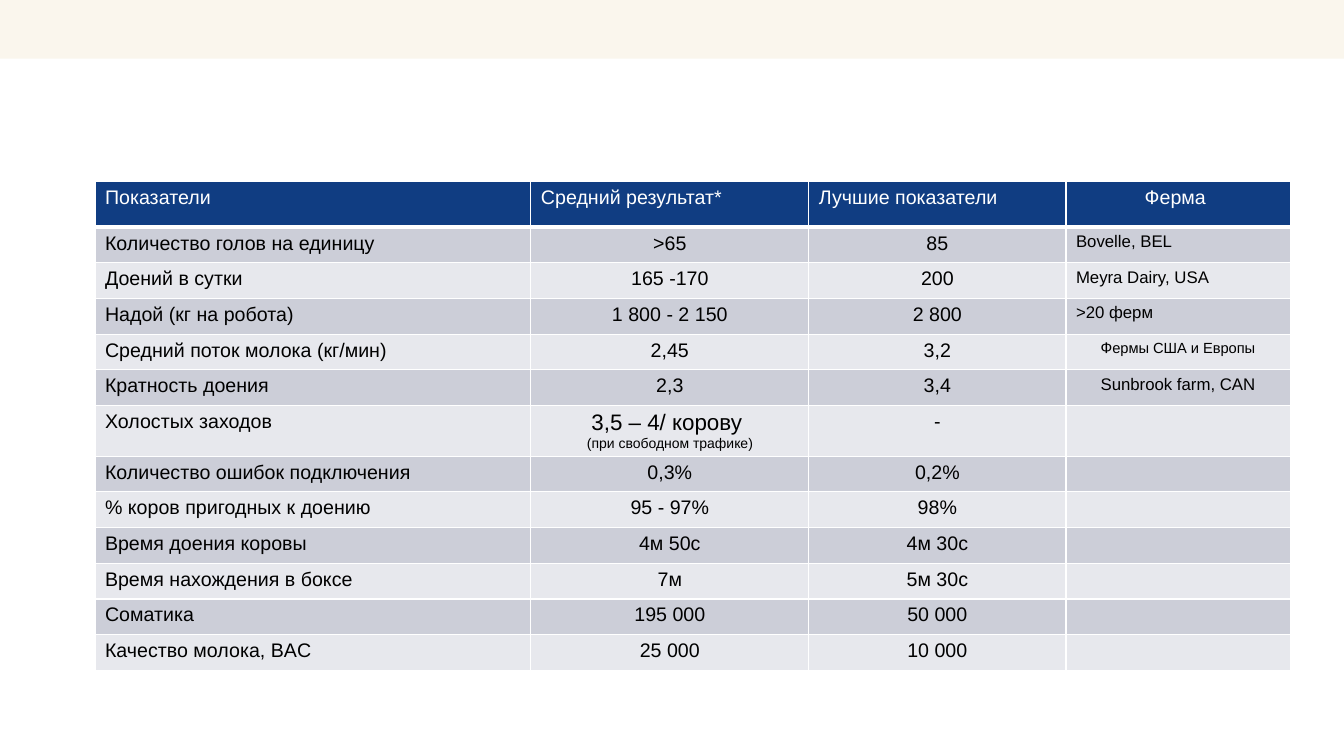
from lxml import etree
from pptx import Presentation
from pptx import util as u
from pptx.dml.color import RGBColor
from pptx.enum import shapes, text
from pptx.oxml.ns import qn

PX = 3810  # 240 px to the inch
COLORS = {"head": "103D82", "odd": "CCCED8", "even": "E7E8ED",
          "band": "FAF6ED", "white": "FFFFFF", "black": "000000"}
HEAD, ROW, TALL = 109, 85, 120
WIDTHS = [1038, 662, 612, 534]
ROWS = [
    ["Показатели", "Средний результат*", "Лучшие показатели", "Ферма "],
    ["Количество голов на единицу", ">65", "85", "Bovelle, BEL"],
    ["Доений в сутки", "165 -170", "200", "Meyra Dairy, USA"],
    ["Надой (кг на робота)", "1 800 - 2 150", "2 800", ">20 ферм"],
    ["Средний поток молока (кг/мин)", "2,45", "3,2",
     [[("Ф", 11), ("ермы США и Европы", 10.5)]]],
    ["Кратность доения", "2,3", "3,4", "Sunbrook farm, CAN"],
    ["Холостых заходов",
     [[("3,5 – 4/ корову ", 16)], [("(при свободном трафике)", 10)]], "-", ""],
    ["Количество ошибок подключения", "0,3%", "0,2%", ""],
    ["% коров пригодныx к доению", "95 - 97%", "98%", ""],
    ["Время доения коровы", "4м 50с", "4м 30с", ""],
    ["Время нахождения в боксе", "7м", "5м 30с", ""],
    ["Соматика", "195 000", "50 000", ""],
    ["Качество молока, BAC", "25 000", "10 000", ""],
]
TALL_ROW = 6
LEFT = {(0, 1), (0, 2), (1, 3), (2, 3), (3, 3)}


def rgb(name):
    return RGBColor.from_string(COLORS[name])


def edge(cell, side, width):
    """Add a white border to one side of a cell; call before its fill."""
    line = etree.SubElement(cell._tc.get_or_add_tcPr(), qn("a:ln" + side),
                            w=str(u.Pt(width)))
    fill = etree.SubElement(line, qn("a:solidFill"))
    etree.SubElement(fill, qn("a:srgbClr"), val=COLORS["white"])


deck = Presentation()
deck.slide_width, deck.slide_height = 3200 * PX, 1800 * PX
slide = deck.slides.add_slide(deck.slide_layouts[6])

band = slide.shapes.add_shape(shapes.MSO_SHAPE.RECTANGLE, 0, 0, 3200 * PX, 140 * PX)
band.shadow.inherit = False
band.fill.solid()
band.fill.fore_color.rgb = rgb("band")
band.line.fill.background()

heights = [HEAD] + [ROW] * (len(ROWS) - 1)
heights[TALL_ROW] = TALL
table = slide.shapes.add_table(len(ROWS), len(WIDTHS), 226 * PX, 432 * PX,
                               sum(WIDTHS) * PX, sum(heights) * PX).table
table.first_row = table.horz_banding = False
for col, width in zip(table.columns, WIDTHS):
    col.width = width * PX
for row, height in zip(table.rows, heights):
    row.height = height * PX

for r, values in enumerate(ROWS):
    shade = "head" if r == 0 else "odd" if r % 2 else "even"
    for c, value in enumerate(values):
        cell = table.cell(r, c)
        for side in "LRTB":
            thick = (r, side) in ((0, "B"), (1, "T"))
            edge(cell, side, 3 if thick else 1)
        cell.fill.solid()
        cell.fill.fore_color.rgb = rgb(shade)

        size = 12 if r and c == 3 else 14
        lines = [[(value, size)]] if isinstance(value, str) else value
        for n, line in enumerate(lines):
            frame = cell.text_frame
            para = frame.add_paragraph() if n else frame.paragraphs[0]
            if not value:
                etree.SubElement(para._p, qn("a:endParaRPr"), sz="1400")
                continue
            plain = c == 0 or (r, c) in LEFT
            para.alignment = text.PP_ALIGN.LEFT if plain else text.PP_ALIGN.CENTER
            for words, points in line:
                run = para.add_run()
                run.text = words
                look = {"name": "Arial", "size": u.Pt(points), "bold": False}
                for key, val in look.items():
                    setattr(run.font, key, val)
                run.font.color.rgb = rgb("black" if r else "white")

deck.save("out.pptx")
